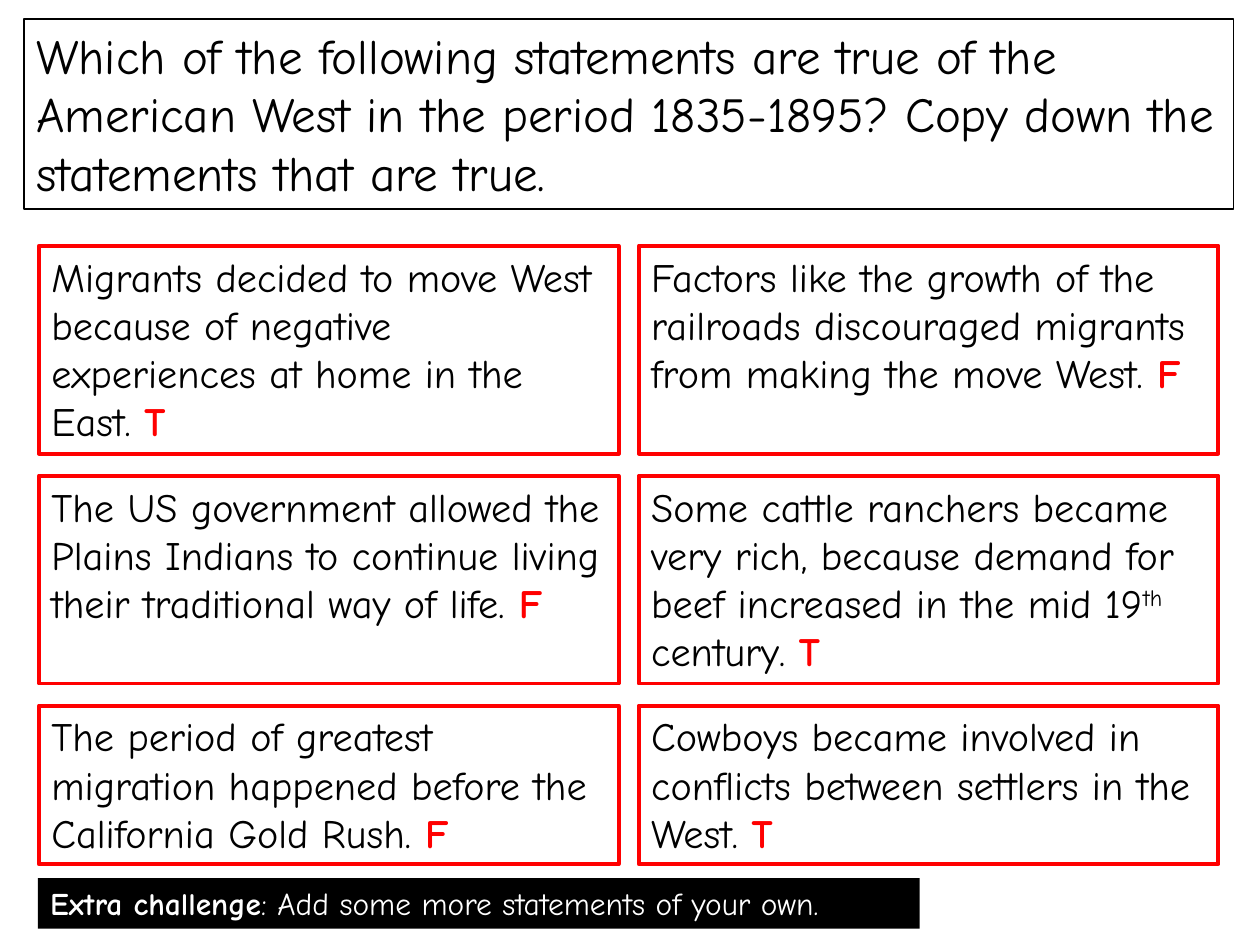
from pptx import Presentation
from pptx import util as u
from pptx.dml.color import RGBColor
from pptx.enum import shapes, text

COLOURS = {"ink": "000000", "paper": "FFFFFF", "answer": "FF0000"}
FONT = "Comic Neue"
QUESTION = ("Which of the following statements are true of the American West "
            "in the period 1835-1895? Copy down the statements that are true.")
STATEMENTS = [
    [(["Migrants decided to move West because of negative experiences at home in the East. "], "T"),
     (["Factors like the growth of the railroads discouraged migrants from making the move West. "], "F")],
    [(["The US government allowed the Plains Indians to continue living their traditional way of life. "], "F"),
     (["Some cattle ranchers became very rich, because demand for beef increased in the mid 19",
       "th", " century. "], "T")],
    [(["The period of greatest migration happened before the California Gold Rush. "], "F"),
     (["Cowboys became involved in conflicts between settlers in the West. "], "T")],
]
ROW_HEIGHTS = [1.65, 1.65, 1.26]
COLUMN_WIDTH, COLUMN_GAP, ROW_GAP = 4.6, 0.16, 0.175


def colour(key):
    """Return the named colour."""
    return RGBColor.from_string(COLOURS[key])


def add_panel(slide, box, fill, border=None, weight=0):
    """Add a filled rectangle and return its empty paragraph."""
    panel = slide.shapes.add_shape(shapes.MSO_SHAPE.RECTANGLE, *map(u.Inches, box))
    panel.shadow.inherit = False
    panel.fill.solid()
    panel.fill.fore_color.rgb = colour(fill)
    if border:
        panel.line.color.rgb = colour(border)
        panel.line.width = u.Pt(weight)
    else:
        panel.line.fill.background()
    frame = panel.text_frame
    layout = {"word_wrap": True, "vertical_anchor": text.MSO_ANCHOR.TOP,
              "auto_size": text.MSO_AUTO_SIZE.SHAPE_TO_FIT_TEXT}
    for name, value in layout.items():
        setattr(frame, name, value)
    wording = frame.paragraphs[0]
    wording.alignment = text.PP_ALIGN.LEFT
    return wording


def add_words(wording, words, size, ink="ink", bold=False, raised=False):
    """Append one styled run to a paragraph."""
    run = wording.add_run()
    run.text = words
    for name, value in {"name": FONT, "size": u.Pt(size), "bold": bold}.items():
        setattr(run.font, name, value)
    run.font.color.rgb = colour(ink)
    if raised:
        run._r.get_or_add_rPr().set("baseline", "30000")


def add_question(slide, box):
    """Place the question across the top."""
    add_words(add_panel(slide, box, "paper", "ink", 1), QUESTION, 28)


def add_statements(slide, left, top):
    """Place the statements in a grid, each ending in its answer."""
    for height, row in zip(ROW_HEIGHTS, STATEMENTS):
        for column, (parts, answer) in enumerate(row):
            x = left + column * (COLUMN_WIDTH + COLUMN_GAP)
            wording = add_panel(slide, (x, top, COLUMN_WIDTH, height), "paper", "answer", 2.25)
            for part in parts:
                add_words(wording, part, 23, raised=part == "th")
            add_words(wording, answer, 23, "answer", bold=True)
        top += height + ROW_GAP


def add_challenge(slide, box):
    """Place the extra challenge bar."""
    wording = add_panel(slide, box, "ink")
    add_words(wording, "Extra challenge", 18, "paper", bold=True)
    add_words(wording, ": Add some more statements of your own.", 18, "paper")


def main():
    """Build and save the slide."""
    deck = Presentation()
    deck.slide_width, deck.slide_height = u.Inches(10), u.Inches(7.5)
    slide = deck.slides.add_slide(deck.slide_layouts[6])
    add_question(slide, (0.19, 0.15, 9.6, 1.51))
    add_statements(slide, 0.31, 1.95)
    add_challenge(slide, (0.3, 6.97, 7, 0.4))
    deck.save("out.pptx")


if __name__ == "__main__":
    main()
